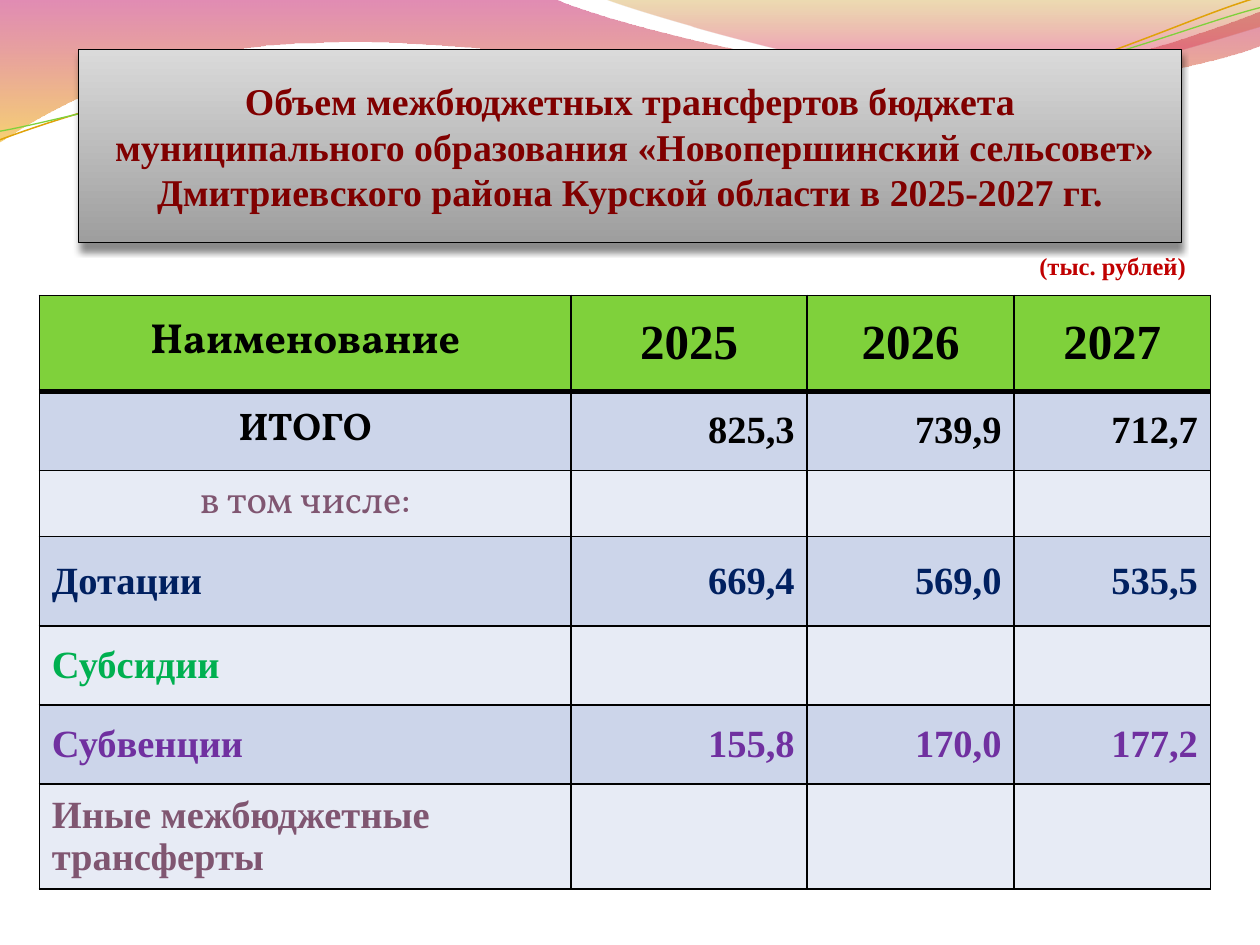
import lxml.etree
import pptx
import pptx.dml.color
import pptx.enum.text
import pptx.oxml
import pptx.oxml.ns
import pptx.util

Pt = pptx.util.Pt
Align = pptx.enum.text.PP_ALIGN
Anchor = pptx.enum.text.MSO_ANCHOR
qn = pptx.oxml.ns.qn

COLORS = {
    "black": "000000", "pink": "BD0059", "amber": "F0AB00", "bronze": "C38B00",
    "crimson": "E1006B", "gold": "E0A209", "green": "7FD13B", "band": "CCD5EA",
    "pale": "E7EBF5", "mauve": "805671", "navy": "002060", "emerald": "00B050",
    "violet": "7030A0", "maroon": "800000", "red": "C00000",
    "silver": "DADADA", "gray": "9E9E9E",
}
SERIF, DISPLAY = "Times New Roman", "Vollkorn"


def color(name):
    return pptx.dml.color.RGBColor.from_string(COLORS[name])


class SlideBuilder:
    """Holds the slide style and draws its elements, with lengths in points."""

    def __init__(self, slide):
        self.slide = slide

    def style(self, paragraph, size, color_name, font=SERIF, bold=True, align=Align.LEFT):
        paragraph.alignment = align
        paragraph.font.name = font
        paragraph.font.size = Pt(size)
        paragraph.font.bold = bold
        paragraph.font.color.rgb = color(color_name)

    def gradient(self, shape, stops):
        shape.fill.gradient()
        shape.fill.gradient_angle = 270
        for stop, (name, position, opacity) in zip(shape.fill.gradient_stops, stops):
            stop.color.rgb = color(name)
            stop.position = position
        fill = shape.element.spPr.find(qn("a:gradFill"))
        for element, (name, position, opacity) in zip(fill.iter(qn("a:srgbClr")), stops):
            if opacity < 100:
                lxml.etree.SubElement(element, qn("a:alpha"), val=str(opacity * 1000))

    def outline(self, start, segments, close):
        """Draw one-point segments as lines and three-point segments as curves."""
        points = [(Pt(x), Pt(y)) for segment in segments for x, y in segment]
        builder = self.slide.shapes.build_freeform(Pt(start[0]), Pt(start[1]))
        builder.add_line_segments(points, close=close)
        shape = builder.convert_to_shape()
        shape.shadow.inherit = False
        lines = shape.element.iter(qn("a:lnTo"))
        for segment, group in [(s, [next(lines) for _ in s]) for s in segments]:
            if len(segment) == 3:
                bezier = lxml.etree.Element(qn("a:cubicBezTo"))
                group[0].addprevious(bezier)
                for line in group:
                    bezier.append(line[0])
                    line.getparent().remove(line)
        return shape

    def wave(self, start, segments, stops):
        shape = self.outline(start, segments, True)
        shape.line.fill.background()
        self.gradient(shape, stops)

    def curve(self, start, segments, color_name, width):
        shape = self.outline(start, segments, False)
        shape.rotation = 357.3
        shape.fill.background()
        shape.line.color.rgb = color(color_name)
        shape.line.width = Pt(width)

    def title(self, box, text):
        shape = self.slide.shapes.title
        shape.left, shape.top, shape.width, shape.height = map(Pt, box)
        shape.element.getparent().append(shape.element)
        self.gradient(shape, [("silver", 0, 100), ("gray", 1, 100)])
        shape.line.color.rgb = color("black")
        shape.line.width = Pt(0.75)
        shape.shadow.inherit = False
        shadow = lxml.etree.SubElement(
            shape.element.spPr.find(qn("a:effectLst")), qn("a:outerShdw"),
            blurRad=str(Pt(4)), dist=str(Pt(4)), dir="5400000", rotWithShape="0")
        shade = lxml.etree.SubElement(shadow, qn("a:srgbClr"), val=COLORS["black"])
        lxml.etree.SubElement(shade, qn("a:alpha"), val="45000")
        frame = shape.text_frame
        frame.text = text
        frame.word_wrap = True
        frame.auto_size = pptx.enum.text.MSO_AUTO_SIZE.NONE
        frame.vertical_anchor = Anchor.MIDDLE
        self.style(frame.paragraphs[0], 21.6, "maroon", align=Align.CENTER)

    def label(self, box, text):
        frame = self.slide.shapes.add_textbox(*map(Pt, box)).text_frame
        frame.word_wrap = True
        frame.text = text
        self.style(frame.paragraphs[0], 14, "red")

    def cell(self, cell, text, fill, top, bottom, **style):
        properties = cell._tc.get_or_add_tcPr()
        for side, width in (("L", 1), ("R", 1), ("T", top), ("B", bottom)):
            line = lxml.etree.SubElement(properties, qn(f"a:ln{side}"), w=str(Pt(width)))
            solid = lxml.etree.SubElement(line, qn("a:solidFill"))
            lxml.etree.SubElement(solid, qn("a:srgbClr"), val=COLORS["black"])
        cell.fill.solid()
        cell.fill.fore_color.rgb = color(fill)
        if text:
            cell.vertical_anchor = Anchor.MIDDLE
            cell.text = text
            self.style(cell.text_frame.paragraphs[0], **style)

    def table(self, box, widths, heights, rows):
        table = self.slide.shapes.add_table(len(rows), len(widths), *map(Pt, box)).table
        table.first_row = table.horz_banding = False
        for column, width in zip(table.columns, widths):
            column.width = Pt(width)
        for index, (values, name_style, value_style) in enumerate(rows):
            table.rows[index].height = Pt(heights[index])
            fill = "green" if index == 0 else ("pale", "band")[index % 2]
            values = values + [""] * (len(widths) - len(values))
            for column, value in enumerate(values):
                self.cell(table.cell(index, column), value, fill,
                          top=3 if index == 1 else 1, bottom=3 if index == 0 else 1,
                          **(value_style if column else name_style))


def main():
    presentation = pptx.Presentation()
    presentation.slide_width, presentation.slide_height = Pt(720), Pt(540)
    builder = SlideBuilder(presentation.slides.add_slide(presentation.slide_layouts[5]))

    builder.wave((0, -0.7), [
        [(316.8, -0.7)],
        [(342.7, 12.2), (478.1, 45.4), (545.8, 45.4)],
        [(614.2, 45.4), (689.8, 18.7), (720, 6.5)],
        [(720.7, 25.9)],
        [(707.8, 31.7), (626.4, 54.7), (537.1, 54)],
        [(447.8, 54), (275, 20.2), (185, 24.5)],
        [(92.9, 25.2), (33.1, 59.8), (-0.7, 81.4)],
    ], [("pink", 0, 45), ("amber", 1, 55)])
    builder.wave((344.9, -0.7), [
        [(366.5, 7.9), (491, 44.6), (553.7, 46.8)],
        [(616.3, 49.7), (691.9, 23), (720, 15.1)],
        [(720, 0)],
    ], [("bronze", 0, 30), ("crimson", 0.8, 45)])
    builder.curve((-1.4, 62.9), [
        [(33.7, 51.7), (114, 29.4), (199.8, 29.9)],
        [(284.8, 30.3), (425.8, 67.2), (512.4, 64.9)],
        [(599, 62.4), (676.4, 25.7), (720.2, 15.6)],
    ], "gold", 0.85)
    builder.curve((-1.2, 58), [
        [(33, 53.8), (118.3, 32.5), (204, 33)],
        [(290.5, 33.5), (429, 63.1), (515.5, 61.3)],
        [(601.4, 59.6), (678.5, 30.1), (721.4, 21.4)],
    ], "green", 0.75)

    heading = dict(size=28, color_name="black", align=Align.CENTER)
    total = dict(size=22, color_name="black")
    including = dict(size=22, color_name="mauve", font=DISPLAY, bold=False,
                     align=Align.CENTER)
    rows = [
        (["Наименование", "2025", "2026", "2027"],
         dict(heading, size=24, font=DISPLAY), heading),
        (["ИТОГО", "825,3", "739,9", "712,7"],
         dict(total, font=DISPLAY, align=Align.CENTER), dict(total, align=Align.RIGHT)),
        (["в том числе:"], including, including),
    ]
    for values, name in [
        (["Дотации", "669,4", "569,0", "535,5"], "navy"),
        (["Субсидии"], "emerald"),
        (["Субвенции", "155,8", "170,0", "177,2"], "violet"),
        (["Иные межбюджетные трансферты"], "mauve"),
    ]:
        style = dict(size=22, color_name=name)
        rows.append((values, style, dict(style, align=Align.RIGHT)))
    builder.table((22.5, 168.75, 669.2, 335), [303.8, 135, 118.2, 112.2],
                  [54.8, 45.2, 33.8, 51.2, 45.2, 45.2, 59.8], rows)

    builder.title((45, 28.3, 630, 110.5),
                  "Объем межбюджетных трансфертов бюджета\v"
                  " муниципального образования «Новопершинский сельсовет» "
                  "Дмитриевского района Курской области в 2025-2027 гг.")
    builder.label((586.8, 139.7, 102.2, 23.8), "(тыс. рублей)")
    presentation.save("out.pptx")


if __name__ == "__main__":
    main()
